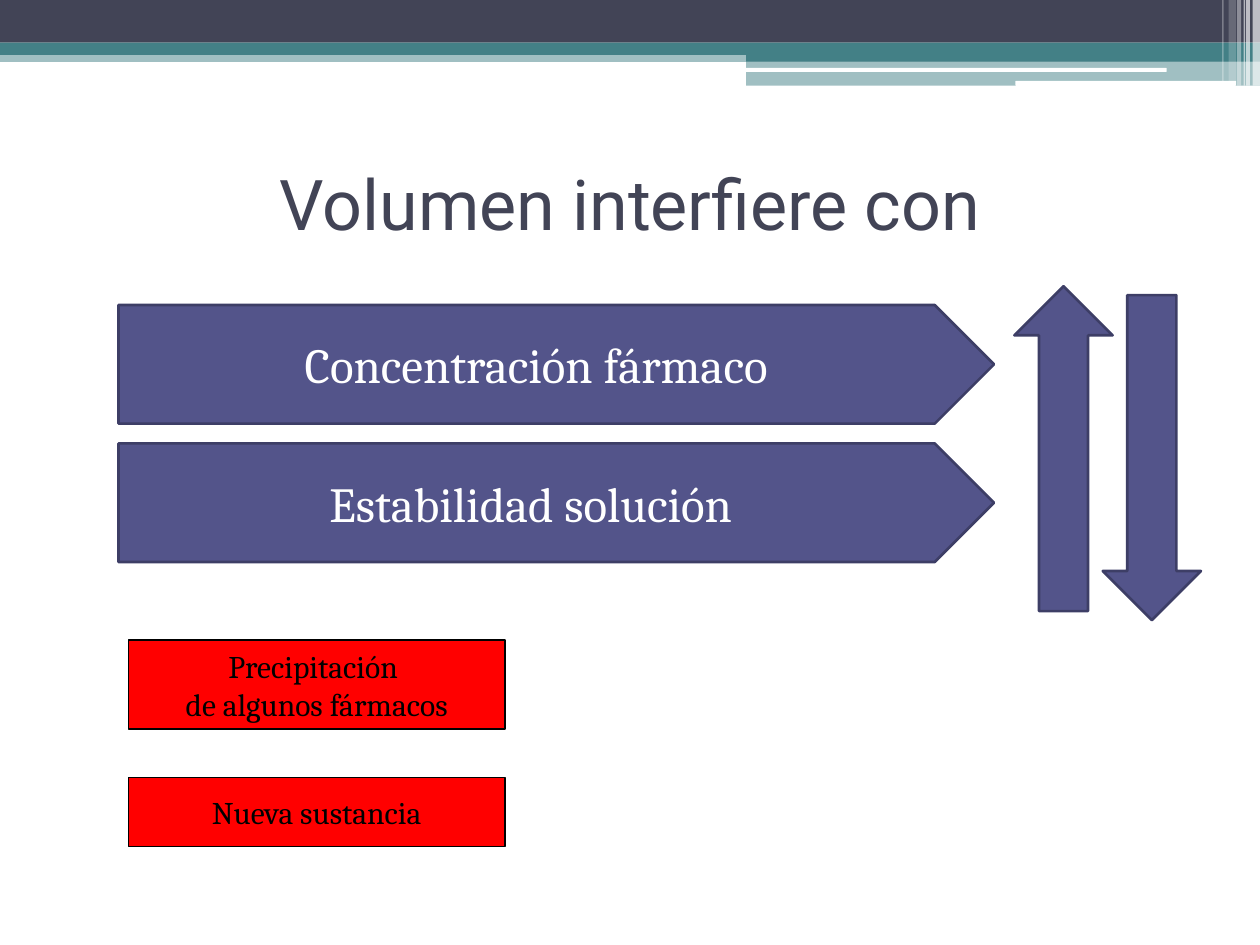
import pptx
import pptx.util
import pptx.dml.color
import pptx.enum.shapes
import pptx.enum.text
import pptx.oxml
import pptx.oxml.ns

Cm = pptx.util.Cm
Pt = pptx.util.Pt
SHAPES = pptx.enum.shapes.MSO_SHAPE
MIDDLE = pptx.enum.text.MSO_ANCHOR.MIDDLE
CENTER = pptx.enum.text.PP_ALIGN.CENTER

COLORS = {
    "slate": "424456",
    "teal": "438086",
    "violet": "53548A",
    "violet_edge": "3D3E66",
    "red": "FF0000",
    "black": "000000",
    "white": "FFFFFF",
}
TITLE_FONT = {"name": "Roboto", "size": Pt(40)}
ARROW_FONT = {"name": "Cambria", "size": Pt(28)}
WARNING_FONT = {"name": "Cambria", "size": Pt(18)}


def rgb(name):
    return pptx.dml.color.RGBColor.from_string(COLORS[name])


def add_block(slide, kind, box, fill, opacity=100, edge=None, edge_width=1.5):
    """Add a flat preset shape; box is left, top, width, height in cm."""
    block = slide.shapes.add_shape(kind, *map(Cm, box))
    block.shadow.inherit = False
    block.fill.solid()
    block.fill.fore_color.rgb = rgb(fill)
    if opacity < 100:
        color = block.fill._xPr.find(".//" + pptx.oxml.ns.qn("a:srgbClr"))
        color.append(pptx.oxml.parse_xml(
            f'<a:alpha {pptx.oxml.ns.nsdecls("a")} val="{opacity * 1000}"/>'))
    if edge:
        block.line.color.rgb = rgb(edge)
        block.line.width = Pt(edge_width)
    else:
        block.line.fill.background()
    return block


def write_lines(holder, lines, font_format, color, wrap=True):
    frame = holder.text_frame
    for attribute, value in {"word_wrap": wrap, "vertical_anchor": MIDDLE}.items():
        setattr(frame, attribute, value)
    for index, line in enumerate(lines):
        paragraph = frame.paragraphs[0] if index == 0 else frame.add_paragraph()
        paragraph.alignment = CENTER
        run = paragraph.add_run()
        run.text = line
        for attribute, value in font_format.items():
            setattr(run.font, attribute, value)
        run.font.color.rgb = rgb(color)


def add_header(slide, left, top, width):
    half = 15.04
    # Bands: x, y, width, height, colour, opacity
    bands = [
        (0, 1.02, width, 0.23, "teal", 50),
        (0, 0, width, 0.86, "slate", 100),
        (0, 0.86, width, 0.25, "teal", 100),
        (half, 0.99, width - half, 0.25, "teal", 100),
        (half, 1.22, width - half, 0.51, "teal", 50),
    ]
    for x, y, w, h, color, opacity in bands:
        add_block(slide, SHAPES.RECTANGLE, (left + x, top + y, w, h), color, opacity)

    # White rules
    for x, y, w, h in [(15.01, 1.37, 8.51, 0.08), (20.47, 1.63, 4.45, 0.1)]:
        add_block(slide, SHAPES.ROUNDED_RECTANGLE, (left + x, top + y, w, h), "white")

    # Translucent slats: x, width, height, opacity
    slats = [
        (25.25, 0.15, 1.73, 65),
        (25.12, 0.08, 1.73, 65),
        (25.07, 0.03, 1.73, 60),
        (24.94, 0.08, 1.73, 40),
        (24.77, 0.15, 1.63, 20),
        (24.64, 0.03, 1.63, 30),
    ]
    for x, w, h, opacity in slats:
        add_block(slide, SHAPES.RECTANGLE, (left + x, top, w, h), "white", opacity)


def add_title(slide, left, top, width, height):
    title = slide.shapes.add_textbox(*map(Cm, (left, top, width, height)))
    write_lines(title, ["Volumen interfiere con"], TITLE_FONT, "slate")


def add_effects(slide, left, top, width):
    height, pitch = 2.39, 2.79
    for row, effect in enumerate(["Concentración fármaco ", "Estabilidad solución  "]):
        box = (left, top + row * pitch, width, height)
        pentagon = add_block(slide, SHAPES.PENTAGON, box, "violet", edge="violet_edge")
        write_lines(pentagon, [effect], ARROW_FONT, "white")


def add_opposite_arrows(slide, left, top):
    for x, y, rotation in [(0, 0, 0), (2.26 - 0.48, 0.18, 180)]:
        arrow = add_block(slide, SHAPES.UP_ARROW, (left + x, top + y, 1.98, 6.55),
                          "violet", edge="violet_edge")
        arrow.rotation = rotation


def add_warnings(slide, left, top, width):
    warnings = [
        (0, 1.8, ["Precipitación ", "de algunos fármacos"]),
        (2.77, 1.4, ["Nueva sustancia"]),
    ]
    for y, height, lines in warnings:
        warning = add_block(slide, SHAPES.RECTANGLE, (left, top + y, width, height),
                            "red", edge="black", edge_width=0.75)
        write_lines(warning, lines, WARNING_FONT, "black", wrap=False)


def main():
    deck = pptx.Presentation()
    deck.slide_width, deck.slide_height = Cm(25.4), Cm(19.05)
    slide = deck.slides.add_slide(deck.slide_layouts[6])
    add_header(slide, 0, 0, 25.4)
    add_title(slide, 1.27, 2.59, 22.86, 2.97)
    add_effects(slide, 2.39, 6.15, 17.65)
    add_opposite_arrows(slide, 20.45, 5.77)
    add_warnings(slide, 2.59, 12.9, 7.59)
    deck.save("out.pptx")


if __name__ == "__main__":
    main()
